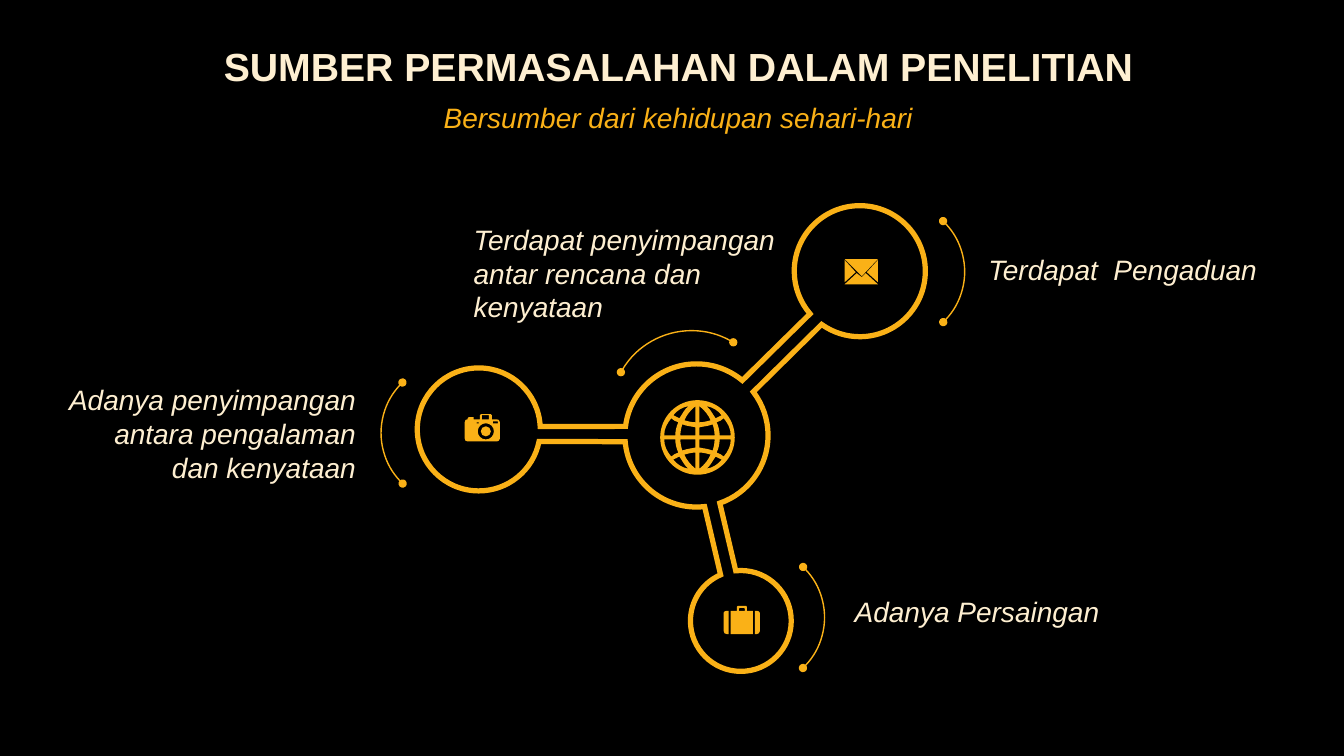
"""Builds the slide on the sources of research problems, as a hub with three satellites."""
from dataclasses import dataclass
from math import cos, radians, sin, tan

from lxml import etree
from pptx import Presentation
from pptx.dml.color import RGBColor
from pptx.enum import shapes, text
from pptx.oxml import ns
from pptx.util import Inches, Pt


@dataclass(frozen=True)
class Theme:
    back: RGBColor = RGBColor.from_string("000000")
    gold: RGBColor = RGBColor.from_string("FAB117")
    cream: RGBColor = RGBColor.from_string("FEEFD1")
    font: str = "Arial"
    title: Pt = Pt(28)
    body: Pt = Pt(20)
    outline: Pt = Pt(3.75)
    thin: Pt = Pt(1)


theme = Theme()
prs = Presentation()
prs.slide_width, prs.slide_height = Inches(40 / 3), Inches(7.5)
slide = prs.slides.add_slide(prs.slide_layouts[6])
slide.background.fill.solid()
slide.background.fill.fore_color.rgb = theme.back


def arc(cx, cy, radius, start=0, end=360):
    """Return a start point and the Bezier curves of a clockwise arc, split at the axes."""
    stops = [start, *(a for a in range(-360, 721, 90) if start < a < end), end]
    points = [(cx + radius * cos(radians(start)), cy + radius * sin(radians(start)))]
    for a, b in zip(map(radians, stops), map(radians, stops[1:])):
        k = 4 / 3 * tan((b - a) / 4)
        points.append((cx + radius * (cos(a) - k * sin(a)), cy + radius * (sin(a) + k * cos(a)),
                       cx + radius * (cos(b) + k * sin(b)), cy + radius * (sin(b) - k * cos(b)),
                       cx + radius * cos(b), cy + radius * sin(b)))
    return points


def draw(contours, filled=True):
    """Draw closed contours as one freeform: two numbers make a line, six a curve."""
    builder = None
    for contour in contours:
        pts = [(Inches(x), Inches(y)) for pt in contour for x, y in zip(pt[::2], pt[1::2])]
        if builder is None:
            builder = slide.shapes.build_freeform(*pts[0], scale=1.0)
        else:
            builder.move_to(*pts[0])
        builder.add_line_segments(pts[1:], close=True)
    s = builder.convert_to_shape()
    outline = next(s._element.iter(ns.qn("a:path")))
    nodes = iter(list(outline))
    for contour in contours:
        next(nodes)
        for pt in contour[1:]:
            node = next(nodes)
            if len(pt) == 6:
                node.tag = ns.qn("a:cubicBezTo")
                for extra in (next(nodes), next(nodes)):
                    node.append(extra[0])
                    outline.remove(extra)
        next(nodes)
    s.shadow.inherit = False
    if filled:
        s.fill.solid()
        s.fill.fore_color.rgb = theme.gold
        s.line.fill.background()
    else:
        s.fill.background()
        s.line.color.rgb = theme.gold
        s.line.width = theme.outline
        etree.SubElement(s.line._get_or_add_ln(), ns.qn("a:miter"), lim="800000")


hub = (6.91, 4.32, 0.71)
mail_circle = (8.53, 2.69, 0.65)
camera_circle = (4.75, 4.26, 0.61)
case_circle = (7.35, 6.16, 0.5)
network = [
    (mail_circle, 139.4, 485.6),
    (hub, -37.5, 71),
    (case_circle, -95.8, 246.3),
    (hub, 83.5, 175),
    (camera_circle, 11.3, 357.2),
    (hub, 187.3, 309.8),
]
draw([[pt for circle, start, end in network for pt in arc(*circle, start, end)]], filled=False)

brackets = [
    (6.06, 3.28, 1.6, 300, False),
    (8.18, 2, 1.39, 135, True),
    (3.78, 3.6, 1.39, 315, True),
    (6.79, 5.43, 1.39, 45, False),
]
for left, top, size, rotation, flipped in brackets:
    s = slide.shapes.add_shape(shapes.MSO_SHAPE.ARC, Inches(left), Inches(top),
                               Inches(size), Inches(size))
    s.adjustments[0], s.adjustments[1] = 161.374, 0.749
    s.rotation = rotation
    if flipped:
        s._element.spPr.xfrm.set("flipH", "1")
    s.shadow.inherit = False
    s.fill.background()
    s.line.color.rgb = theme.gold
    s.line.width = theme.thin
    for end in ("a:headEnd", "a:tailEnd"):
        etree.SubElement(s.line._get_or_add_ln(), ns.qn(end), type="oval")

envelope = [
    [(8.59, 2.71), (8.71, 2.82), (8.38, 2.82), (8.5, 2.71), (8.55, 2.75)],
    [(8.71, 2.58), (8.71, 2.8), (8.6, 2.7)],
    [(8.38, 2.58), (8.49, 2.7), (8.38, 2.8)],
    [(8.38, 2.57), (8.71, 2.57), (8.55, 2.74)],
]
camera = [
    arc(4.82, 4.28, 0.05),
    arc(4.82, 4.28, 0.08),
    [(4.73, 4.19), (4.73, 4.2), (4.75, 4.2), (4.75, 4.19)],
    [(4.89, 4.18), (4.89, 4.2), (4.94, 4.2), (4.94, 4.18)],
    [(4.78, 4.12), (4.78, 4.16), (4.85, 4.16), (4.85, 4.12)],
    [(4.77, 4.11), (4.87, 4.11), (4.87, 4.11, 4.88, 4.12, 4.88, 4.12), (4.88, 4.16),
     (4.93, 4.16), (4.94, 4.16, 4.96, 4.17, 4.96, 4.19), (4.96, 4.35),
     (4.96, 4.37, 4.94, 4.38, 4.93, 4.38), (4.64, 4.38),
     (4.62, 4.38, 4.61, 4.37, 4.61, 4.35), (4.61, 4.19),
     (4.61, 4.17, 4.62, 4.16, 4.64, 4.16), (4.64, 4.15),
     (4.64, 4.14, 4.64, 4.14, 4.65, 4.14), (4.7, 4.14),
     (4.7, 4.14, 4.7, 4.14, 4.7, 4.15), (4.7, 4.16), (4.76, 4.16), (4.76, 4.12),
     (4.76, 4.12, 4.76, 4.11, 4.77, 4.11)],
]
suitcase = [
    [(7.49, 6.06), (7.51, 6.06), (7.52, 6.06, 7.54, 6.07, 7.54, 6.08), (7.54, 6.26),
     (7.54, 6.28, 7.52, 6.29, 7.51, 6.29), (7.49, 6.29)],
    [(7.21, 6.06), (7.23, 6.06), (7.23, 6.29), (7.21, 6.29),
     (7.19, 6.29, 7.18, 6.28, 7.18, 6.26), (7.18, 6.08),
     (7.18, 6.07, 7.19, 6.06, 7.21, 6.06)],
    [(7.34, 6.03), (7.33, 6.03, 7.33, 6.03, 7.33, 6.04), (7.33, 6.06), (7.39, 6.06),
     (7.39, 6.04), (7.39, 6.03, 7.38, 6.03, 7.38, 6.03)],
    [(7.32, 6.01), (7.39, 6.01), (7.4, 6.01, 7.41, 6.01, 7.41, 6.02), (7.41, 6.06),
     (7.47, 6.06), (7.47, 6.29), (7.25, 6.29), (7.25, 6.06), (7.31, 6.06), (7.31, 6.02),
     (7.31, 6.01, 7.31, 6.01, 7.32, 6.01)],
]
globe_x, globe_y = 6.92, 4.34
quadrant_cells = [
    [(0.18, 0.19), (0.15, 0.23, 0.13, 0.28, 0.09, 0.31), (0.15, 0.3, 0.2, 0.27, 0.24, 0.22),
     (0.22, 0.21, 0.2, 0.2, 0.18, 0.19)],
    [(0.02, 0.15), (0.02, 0.31), (0.07, 0.27, 0.11, 0.22, 0.13, 0.17),
     (0.09, 0.16, 0.06, 0.15, 0.02, 0.15)],
    [(0.02, 0.02), (0.02, 0.1), (0.06, 0.11, 0.1, 0.11, 0.15, 0.13),
     (0.16, 0.1, 0.17, 0.06, 0.17, 0.02)],
    [(0.22, 0.02), (0.22, 0.06, 0.21, 0.11, 0.19, 0.15), (0.22, 0.16, 0.24, 0.17, 0.26, 0.19),
     (0.3, 0.14, 0.33, 0.09, 0.33, 0.02)],
]
globe = [arc(globe_x, globe_y, 0.37)]
for side in (-1, 1):
    for half in (-1, 1):
        axes = ((globe_x, side), (globe_y, half)) * 3
        globe += [[tuple(mid + sign * v for (mid, sign), v in zip(axes, pt)) for pt in cell]
                  for cell in quadrant_cells]
for icon in (envelope, camera, suitcase, globe):
    draw(icon)

left, center, right = text.PP_ALIGN.LEFT, text.PP_ALIGN.CENTER, text.PP_ALIGN.RIGHT
heading = ["SUMBER PERMASALAHAN DALAM PENELITIAN", "Bersumber dari kehidupan sehari-hari"]
boxes = [
    (0.4, 0.51, 12.66, 0.79, center, heading),
    (0.52, 3.75, 3.11, 1.11, right, ["Adanya penyimpangan antara pengalaman dan kenyataan"]),
    (4.6, 2.16, 3.28, 1.11, left, ["Terdapat penyimpangan antar rencana dan kenyataan"]),
    (9.22, 2.46, 3.35, 0.44, right, ["Terdapat  Pengaduan"]),
    (8.38, 5.85, 4.5, 0.44, left, ["Adanya Persaingan"]),
]
for x, y, width, height, align, lines in boxes:
    tf = slide.shapes.add_textbox(Inches(x), Inches(y), Inches(width), Inches(height)).text_frame
    tf.word_wrap = True
    tf.text = "\n".join(lines)
    for p in tf.paragraphs:
        p.alignment = align
        p.font.name, p.font.size = theme.font, theme.body
        p.font.italic = True
        p.font.color.rgb = theme.cream
    if lines is heading:
        tf.vertical_anchor = text.MSO_ANCHOR.MIDDLE
        title, subtitle = tf.paragraphs
        title.line_spacing = subtitle.line_spacing = 0.9
        title.font.size, title.font.bold, title.font.italic = theme.title, True, False
        subtitle.space_before = Pt(10)
        subtitle.font.color.rgb = theme.gold

prs.save("out.pptx")
